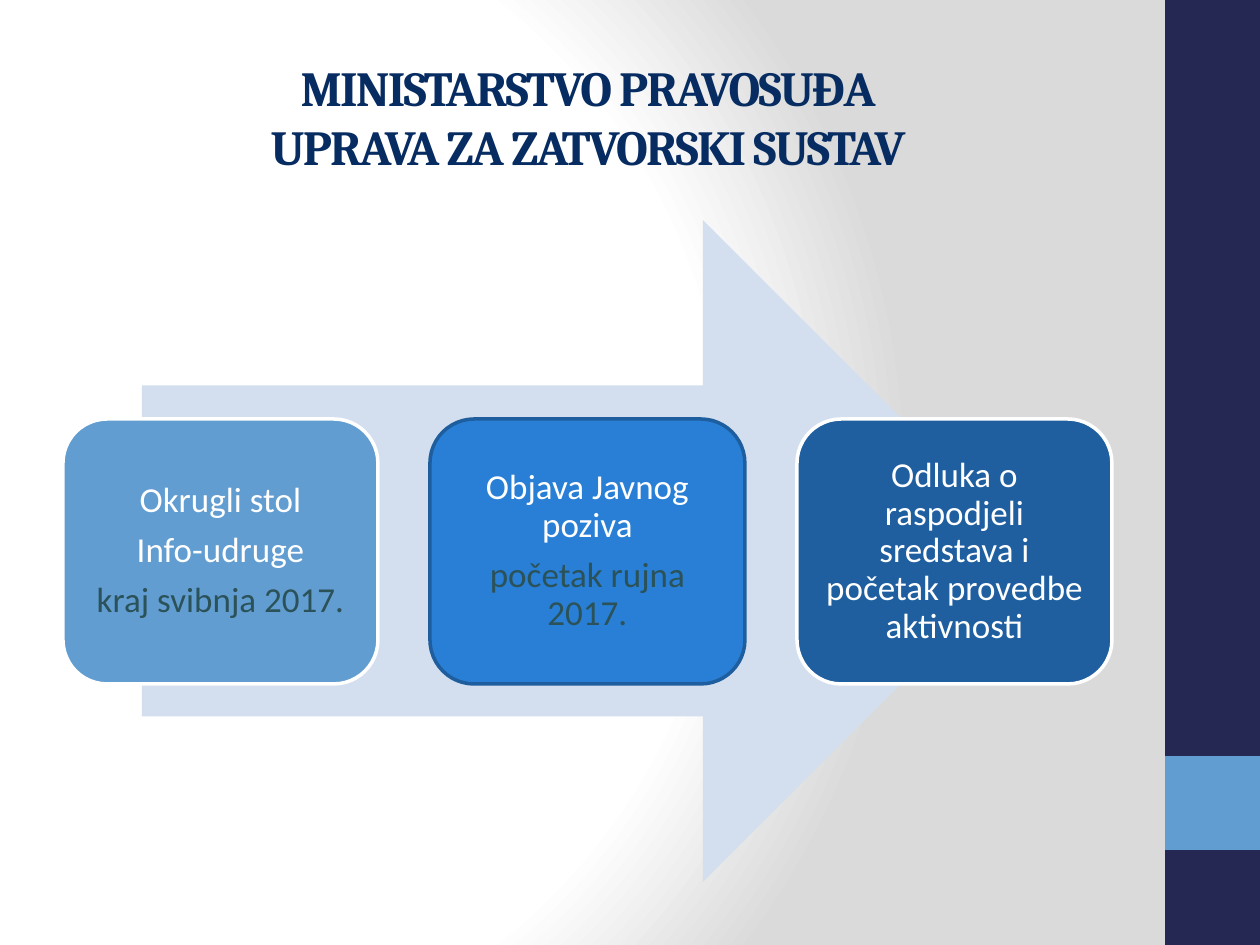
from pptx import Presentation
from pptx.dml.color import RGBColor as RGB
from pptx.enum.shapes import MSO_SHAPE as SHAPE
from pptx.enum.text import MSO_ANCHOR as ANCHOR, PP_ALIGN as ALIGN
from pptx.oxml import parse_xml
from pptx.oxml.ns import qn
from pptx.util import Pt

THEME = {
    "navy": "242852", "sky": "629DD1", "blue": "297FD5", "deep": "1F5FA0",
    "edge": "1E5E9E", "pale": "D3DFEE", "white": "FFFFFF", "grey": "DADADA",
    "title": "072C62", "date": "2B5259",
    "head": {"name": "Cambria", "size": Pt(28), "bold": True},
    "body": {"name": "Calibri", "size": Pt(20)},
}
PX = 914400 / 126


def place(kind, box, fill, line=None):
    """Add a preset shape at a px box, with a line only if a colour is given."""
    shape = slide.shapes.add_shape(kind, *[round(n * PX) for n in box])
    shape.shadow.inherit = False
    shape.fill.solid()
    shape.fill.fore_color.rgb = RGB.from_string(THEME[fill])
    if line:
        shape.line.color.rgb = RGB.from_string(THEME[line])
        shape.line.width = Pt(2)
    else:
        shape.line.fill.background()
    return shape


def write(para, text, style, color):
    run = para.add_run()
    run.text = text
    for key, val in THEME[style].items():
        setattr(run.font, key, val)
    run.font.color.rgb = RGB.from_string(THEME[color])
    return run


prs = Presentation()
prs.slide_width, prs.slide_height = round(1260 * PX), round(945 * PX)
slide = prs.slides.add_slide(prs.slide_layouts[6])

# Background: a circular gradient
slide.background.fill.gradient()
grad = slide.element.find(".//" + qn("a:gradFill"))
stops = "".join(
    f'<a:gs pos="{pos * 1000}"><a:srgbClr val="{THEME[name]}"/></a:gs>'
    for pos, name in [(0, "white"), (75, "white"), (100, "grey")]
)
grad.getparent().replace(grad, parse_xml(
    '<a:gradFill xmlns:a="http://schemas.openxmlformats.org/drawingml/2006/main"'
    f' rotWithShape="1"><a:gsLst>{stops}</a:gsLst><a:path path="circle">'
    '<a:fillToRect l="20000" t="50000" r="100000" b="50000"/></a:path></a:gradFill>'
))

# Side band
place(SHAPE.RECTANGLE, (1165, 0, 95, 945), "navy")
place(SHAPE.RECTANGLE, (1165, 756, 95, 94), "sky")

# Title
title = slide.shapes.add_textbox(*[round(n * PX) for n in (63, 38, 1050, 157)])
frame = title.text_frame
frame.word_wrap = True
frame.vertical_anchor = ANCHOR.MIDDLE
para = frame.paragraphs[0]
para.alignment = ALIGN.CENTER
for row, text in enumerate(["MINISTARSTVO PRAVOSUĐA", "UPRAVA ZA ZATVORSKI SUSTAV"]):
    if row:
        para.add_line_break()
    run = write(para, text, "head", "title")
    run.font._element.set("spc", "-100")

# Arrow with the three steps on it
place(SHAPE.RIGHT_ARROW, (142, 220, 892, 662), "pale")

STEPS = [
    ("sky", "white", [("Okrugli stol", "white"), ("Info-udruge", "white"),
                      ("kraj svibnja 2017.", "date")]),
    ("blue", "edge", [("Objava Javnog poziva", "white"),
                      ("početak rujna 2017.", "date")]),
    ("deep", "white", [("Odluka o raspodjeli sredstava i početak provedbe aktivnosti",
                        "white")]),
]
FRAME = {"word_wrap": True, "vertical_anchor": ANCHOR.MIDDLE}
FRAME |= {f"margin_{side}": round(10 * PX) for side in ("left", "top", "right", "bottom")}
PARA = {"alignment": ALIGN.CENTER, "line_spacing": 0.9, "space_after": Pt(7)}

for col, (fill, line, texts) in enumerate(STEPS):
    card = place(SHAPE.ROUNDED_RECTANGLE, (63 + 367 * col, 419, 315, 265), fill, line)
    frame = card.text_frame
    for key, val in FRAME.items():
        setattr(frame, key, val)
    for row, (text, color) in enumerate(texts):
        para = frame.add_paragraph() if row else frame.paragraphs[0]
        for key, val in PARA.items():
            setattr(para, key, val)
        write(para, text, "body", color)

prs.save("out.pptx")
